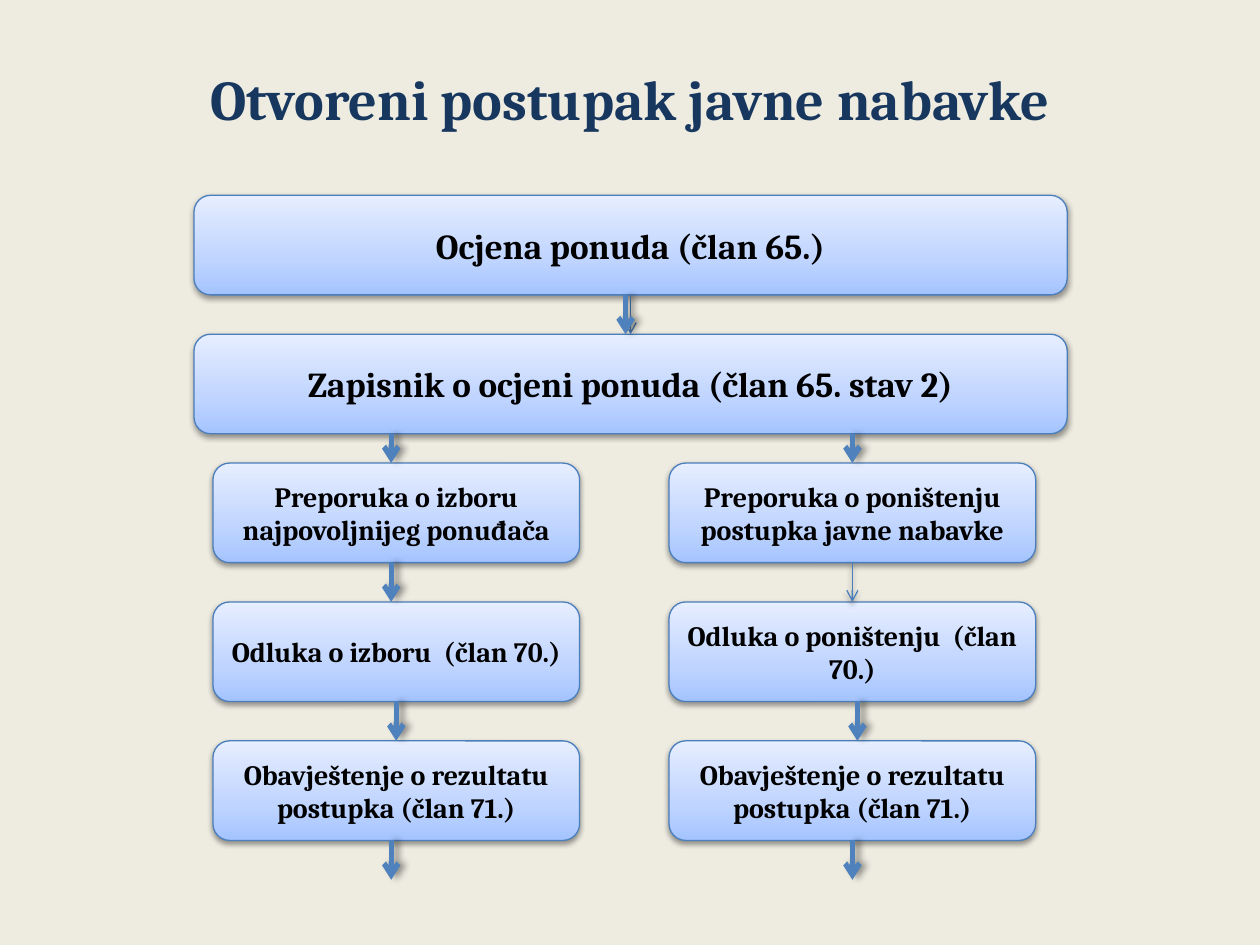
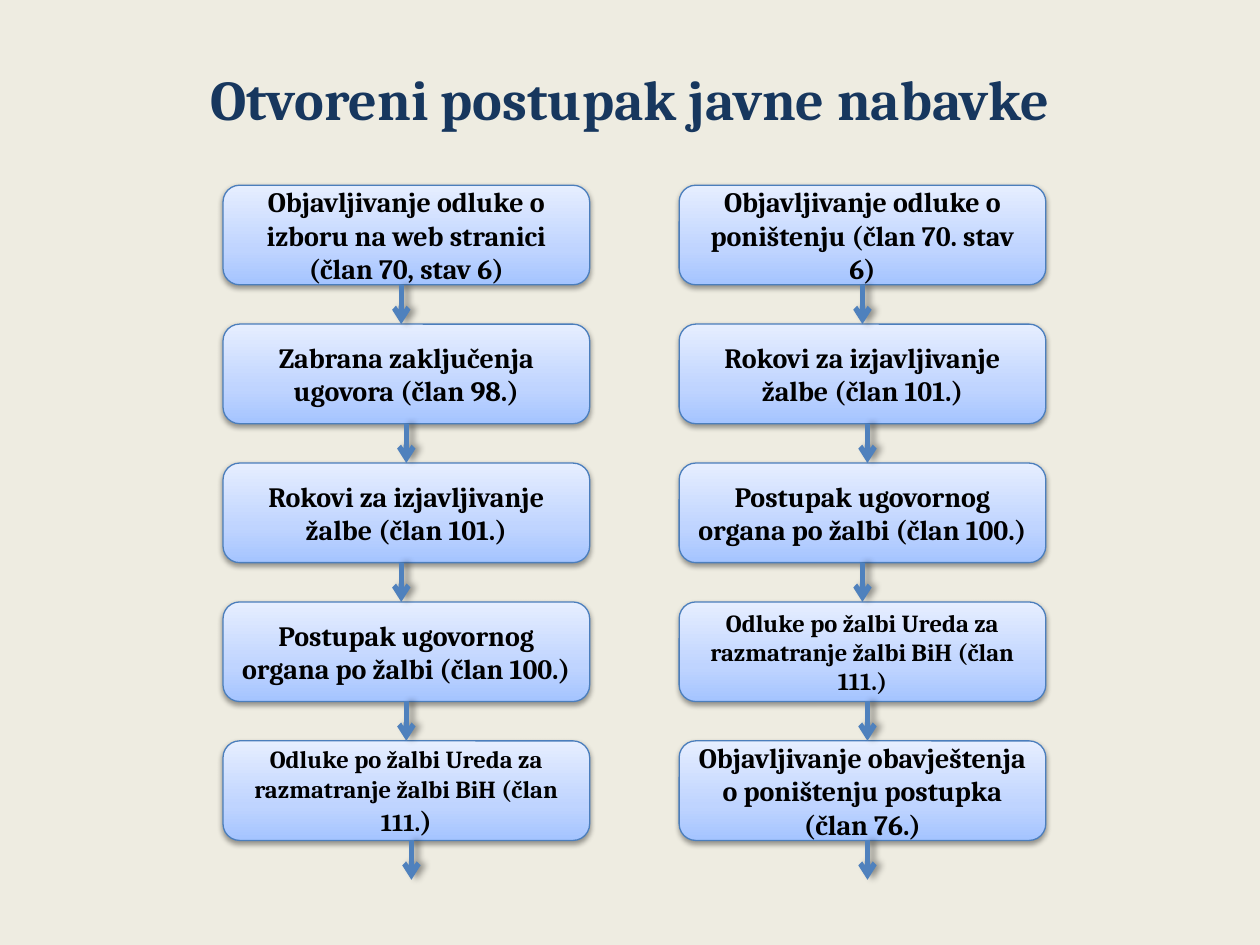
from lxml.etree import SubElement
from pptx import Presentation
from pptx.dml.color import RGBColor
from pptx.enum.shapes import MSO_CONNECTOR, MSO_SHAPE
from pptx.enum.text import MSO_ANCHOR, PP_ALIGN
from pptx.oxml import parse_xml
from pptx.oxml.ns import nsdecls, qn
from pptx.util import Inches, Pt

# Content: each box is a list of (text, size) spans; each arrow is its
# sideways shift from the middle of its column, in inches
TITLE = "Otvoreni postupak javne nabavke"
APPEAL_DECISION = "Odluke po žalbi Ureda za razmatranje žalbi BiH (član 111."
APPEAL_DEADLINES = [("Rokovi za izjavljivanje žalbe (član 101.)", 16)]
AUTHORITY_PROCEDURE = [("Postupak ugovornog organa po žalbi (član 100.)", 16)]
RESULT_NOTICE = [("Obavještenje o rezultatu postupka (član 71.)", 16)]

EVALUATION = {
    "wide": [
        [("Ocjena ponuda (član 65.)", 20)],
        [("Zapisnik o ocjeni ponuda (član 65. stav 2)", 20)],
    ],
    "first_row": 2,
    "columns": [
        {"left": 1.69, "entry": -0.04, "shifts": [-0.04, 0, -0.04], "thin": None,
         "boxes": [
             [("Preporuka o izboru najpovoljnijeg ponuđača", 16)],
             [("Odluka o izboru  (član 70.)", 16)],
             RESULT_NOTICE]},
        {"left": 5.31, "entry": 0, "shifts": [0, 0.04, 0], "thin": 0,
         "boxes": [
             [("Preporuka o poništenju postupka javne nabavke", 16)],
             [("Odluka o poništenju  (član 70.)", 16)],
             RESULT_NOTICE]},
    ],
}
APPEALS = {
    "wide": [],
    "first_row": 0,
    "columns": [
        {"left": 1.77, "shifts": [-0.04, 0, -0.04, 0, 0.04], "thin": None,
         "boxes": [
             [("Objavljivanje odluke o izboru na web stranici (član 70, stav 6)", 16)],
             [("Zabrana zaključenja ugovora (član 98.)", 16)],
             APPEAL_DEADLINES,
             AUTHORITY_PROCEDURE,
             [(APPEAL_DECISION, 14), (")", 16)]]},
        {"left": 5.39, "shifts": [0, 0.04, 0, 0.04, 0.04], "thin": None,
         "boxes": [
             [("Objavljivanje odluke o poništenju (član 70. stav 6)", 16)],
             APPEAL_DEADLINES,
             AUTHORITY_PROCEDURE,
             [(APPEAL_DECISION + ")", 14)],
             [("Objavljivanje obavještenja o poništenju postupka (član 76.)", 16)]]},
    ],
}

# Shared look and grid, in inches
BACKGROUND, NAVY, BLACK = "EEECE1", "17375E", "000000"
OUTLINE, ARROW = "4B7EBC", "4F81BD"
GRADIENT = [(0, "A4C4FF"), (35, "BFD4FF"), (100, "E6EEFF")]
BOX_SHADOW = {"opacity": 38, "blur": 3.1, "distance": 1.6, "angle": 90}
ARROW_SHADOW = {"opacity": 40, "blur": 4, "distance": 3, "angle": 0}
ROW_TOP, ROW_STEP, BOX_HEIGHT = 1.47, 1.1025, 0.79
COLUMN_WIDTH = 2.91
WIDE_LEFT, WIDE_TOP, WIDE_WIDTH = 1.54, 1.55, 6.93
BOTTOM, TOP = 2, 0


def color(value):
    return RGBColor.from_string(value)


def set_format(target, values):
    for name, value in values.items():
        setattr(target, name, value)


def set_line(shape, value, width):
    shape.line.color.rgb = color(value)
    shape.line.width = Pt(width)


def set_effects(shape, shadow):
    """Give the shape one outer shadow, or none at all."""
    effects = SubElement(shape._element.spPr, qn("a:effectLst"))
    if shadow:
        outer = SubElement(effects, qn("a:outerShdw"), {
            "blurRad": str(Pt(shadow["blur"])),
            "dist": str(Pt(shadow["distance"])),
            "dir": str(shadow["angle"] * 60000),
            "rotWithShape": "0"})
        tint = SubElement(outer, qn("a:srgbClr"), val=BLACK)
        SubElement(tint, qn("a:alpha"), val=str(shadow["opacity"] * 1000))


def set_gradient(shape):
    stops = "".join(
        f'<a:gs pos="{position * 1000}"><a:srgbClr val="{value}"/></a:gs>'
        for position, value in GRADIENT)
    fill = parse_xml(
        f'<a:gradFill {nsdecls("a")} rotWithShape="1"><a:gsLst>{stops}</a:gsLst>'
        f'<a:lin ang="{270 * 60000}" scaled="0"/></a:gradFill>')
    shape._element.spPr.find(qn("a:prstGeom")).addnext(fill)


def write(shape, spans, text_color):
    set_format(shape.text_frame, {
        "word_wrap": True, "vertical_anchor": MSO_ANCHOR.MIDDLE})
    para = shape.text_frame.paragraphs[0]
    para.alignment = PP_ALIGN.CENTER
    for text, size in spans:
        span = para.add_run()
        span.text = text
        set_format(span.font, {"name": "Cambria", "size": Pt(size), "bold": True})
        span.font.color.rgb = color(text_color)


def add_box(page, left, top, width, spans):
    box = page.shapes.add_shape(
        MSO_SHAPE.ROUNDED_RECTANGLE,
        Inches(left), Inches(top), Inches(width), Inches(BOX_HEIGHT))
    set_gradient(box)
    set_line(box, OUTLINE, 0.75)
    set_effects(box, BOX_SHADOW)
    write(box, spans, BLACK)
    return box


def add_arrow(page, x, start, end, upper=None, lower=None,
              thin=False, shadow=ARROW_SHADOW):
    arrow = page.shapes.add_connector(
        MSO_CONNECTOR.STRAIGHT, Inches(x), Inches(start), Inches(x), Inches(end))
    if upper:
        arrow.begin_connect(upper, BOTTOM)
    if lower:
        arrow.end_connect(lower, TOP)
    set_line(arrow, OUTLINE if thin else ARROW, 0.75 if thin else 3)
    SubElement(arrow.line._get_or_add_ln(), qn("a:tailEnd"), type="arrow")
    set_effects(arrow, shadow)


def add_wide_boxes(page, texts):
    """Stack the full-width boxes; return the bottom of the last one."""
    tops = [WIDE_TOP + ROW_STEP * row for row in range(len(texts))]
    boxes = [add_box(page, WIDE_LEFT, top, WIDE_WIDTH, spans)
             for top, spans in zip(tops, texts)]
    center = WIDE_LEFT + WIDE_WIDTH / 2
    for upper, lower, top in zip(boxes, boxes[1:], tops):
        start, end = top + BOX_HEIGHT, top + ROW_STEP
        add_arrow(page, center, start, end, upper, lower, thin=True, shadow=None)
        add_arrow(page, center - 0.04, start, end)
    return tops[-1] + BOX_HEIGHT if tops else None


def add_column(page, column, first_row, wide_bottom):
    left, shifts = column["left"], column["shifts"]
    center = left + COLUMN_WIDTH / 2
    tops = [ROW_TOP + ROW_STEP * (first_row + row) for row in range(len(shifts))]
    boxes = [add_box(page, left, top, COLUMN_WIDTH, spans)
             for top, spans in zip(tops, column["boxes"])]

    # Arrow from the wide box above
    if wide_bottom:
        entry = column["entry"]
        add_arrow(page, center + entry, wide_bottom, tops[0],
                  lower=None if entry else boxes[0])

    # Arrow below every box; centred ones are joined to the boxes
    for row, (shift, top) in enumerate(zip(shifts, tops)):
        upper = None if shift else boxes[row]
        lower = boxes[row + 1] if upper and row + 1 < len(boxes) else None
        thin = row == column["thin"]
        add_arrow(page, center + shift, top + BOX_HEIGHT, top + ROW_STEP,
                  upper, lower, thin, BOX_SHADOW if thin else ARROW_SHADOW)


def add_page(deck, flow):
    page = deck.slides.add_slide(deck.slide_layouts[6])
    page.background.fill.solid()
    page.background.fill.fore_color.rgb = color(BACKGROUND)
    title = page.shapes.add_textbox(Inches(0.5), Inches(0.3), Inches(9), Inches(0.96))
    write(title, [(TITLE, 32)], NAVY)
    wide_bottom = add_wide_boxes(page, flow["wide"])
    for column in flow["columns"]:
        add_column(page, column, flow["first_row"], wide_bottom)


def main():
    deck = Presentation()
    set_format(deck, {"slide_width": Inches(10), "slide_height": Inches(7.5)})
    for flow in (EVALUATION, APPEALS):
        add_page(deck, flow)
    deck.save("out.pptx")


if __name__ == "__main__":
    main()
